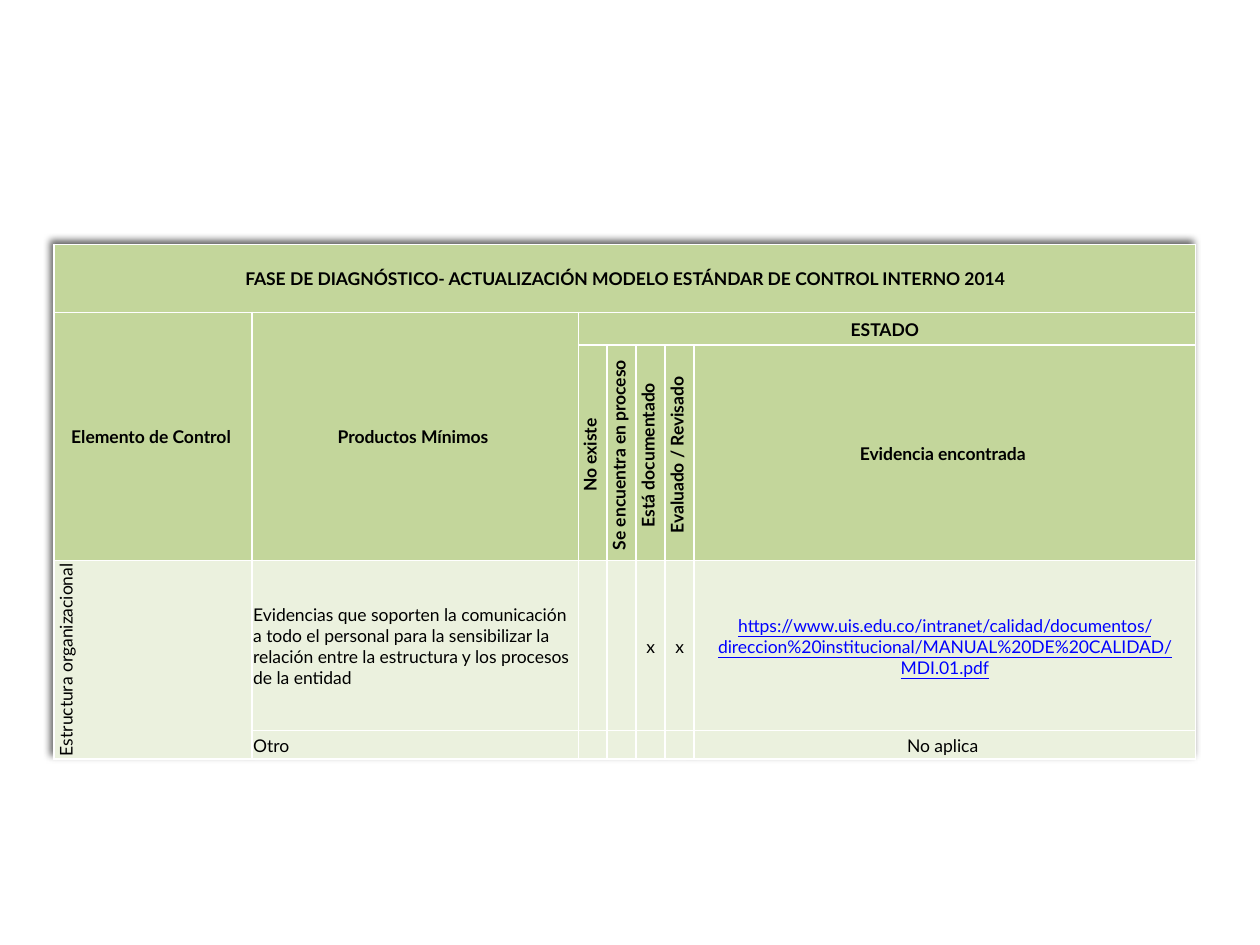
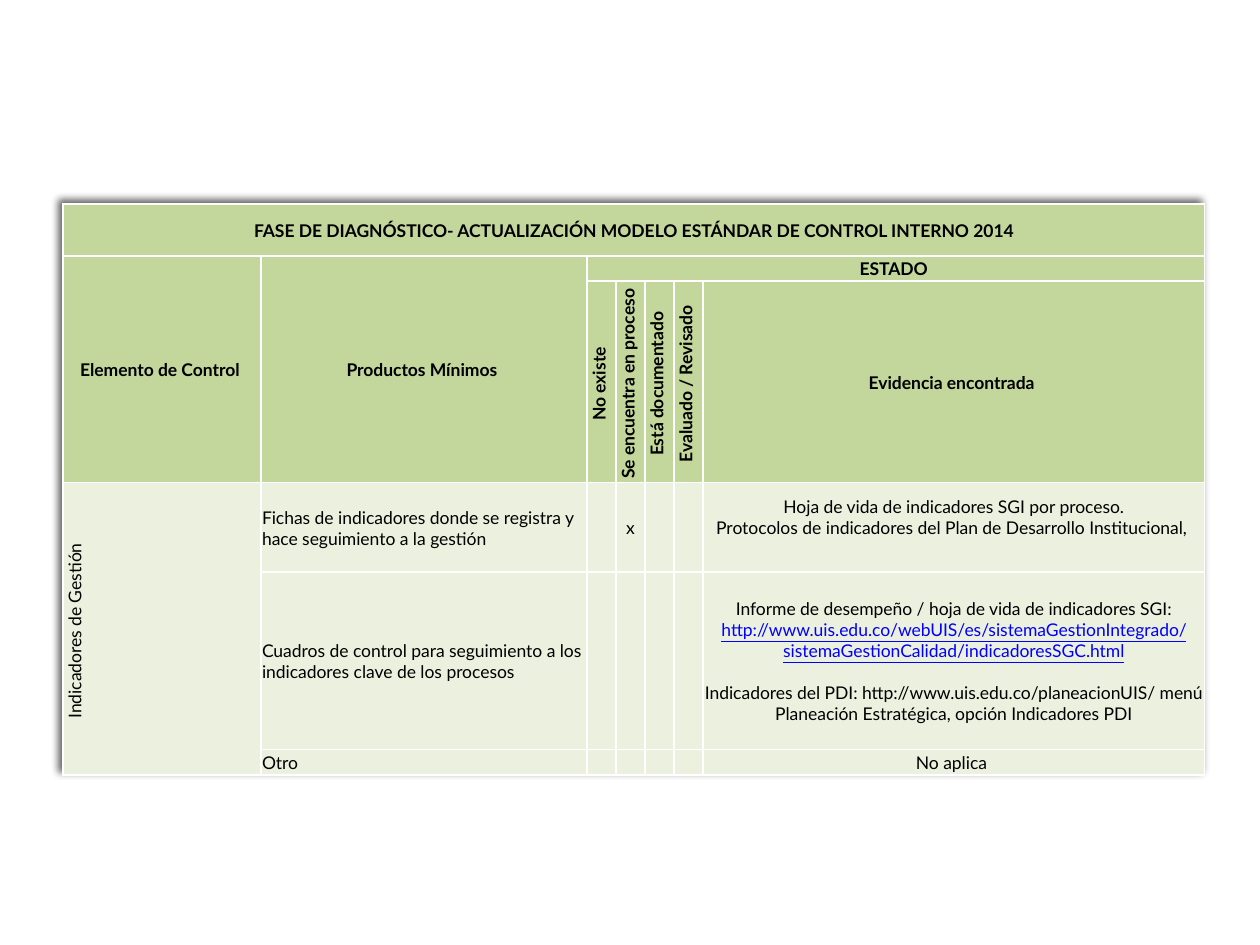
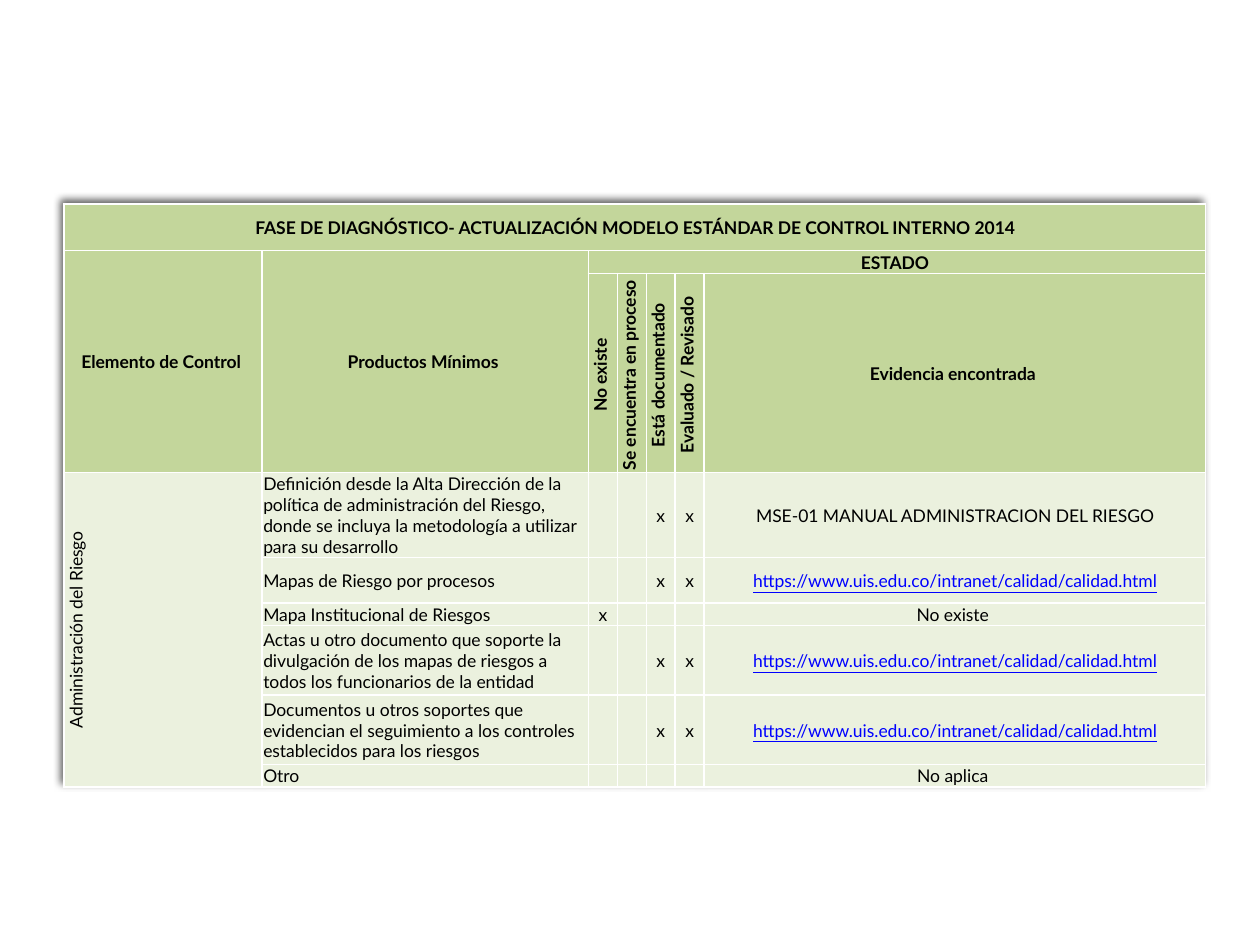
"""Builds the three diagnostic tables of the internal control model."""
from lxml.etree import SubElement
from pptx import Presentation
from pptx.dml.color import RGBColor
from pptx.enum.text import MSO_ANCHOR, PP_ALIGN
from pptx.oxml import parse_xml
from pptx.oxml.ns import nsdecls, qn
from pptx.util import Inches, Pt

CENTER, LEFT, MIDDLE = PP_ALIGN.CENTER, PP_ALIGN.LEFT, MSO_ANCHOR.MIDDLE
COLORS = {"header": "C3D69B", "body": "EBF1DE", "border": "FFFFFF", "text": "000000", "link": "0000FF"}
FONT, FONT_SIZE, LINE_HEIGHT = "Lato", Pt(10), Pt(12)
MARGINS = {"margin_left": Inches(0.01), "margin_right": Inches(0.01),
           "margin_top": Inches(0.01), "margin_bottom": 0, "vertical_anchor": MIDDLE}
COLUMN_WIDTHS = [1.57, 2.59] + [0.23] * 4 + [3.98]
PRODUCT_COLUMN, EVIDENCE_COLUMN = 1, 6
STATE_COLUMNS = range(2, 6)

HEADER = [
    ["FASE DE DIAGNÓSTICO- ACTUALIZACIÓN MODELO ESTÁNDAR DE CONTROL INTERNO 2014"] + [""] * 6,
    ["Elemento de Control ", "Productos Mínimos ", "ESTADO "] + [""] * 4,
    ["", "", "No existe ", "Se encuentra en proceso ", "Está documentado ",
     "Evaluado / Revisado ", "Evidencia encontrada "],
]
HEADER_MERGES = [((0, 0), (0, 6)), ((1, 0), (2, 0)), ((1, 1), (2, 1)), ((1, 2), (1, 6))]
QUALITY_PAGE = "https://www.uis.edu.co/intranet/calidad/calidad.html"
OTHER = ("Otro", "", "No aplica ")

# Each product holds its name, the numbers of its marked states and its evidence.
DIAGNOSTICS = [
    {"element": "Estructura organizacional ", "position": (0.43, 1.94),
     "rows": [0.54, 0.26, 1.71, 1.35, 0.21],
     "products": [
         ("Evidencias que soporten la comunicación a todo el personal para la sensibilizar la "
          "relación entre la estructura y los procesos de la entidad", "34",
          "https://www.uis.edu.co/intranet/calidad/documentos/direccion%20institucional/"
          "MANUAL%20DE%20CALIDAD/MDI.01.pdf"),
         OTHER]},
    {"element": "Indicadores de Gestión ", "position": (0.5, 1.62),
     "rows": [0.41, 0.2, 1.6, 0.71, 1.41, 0.2],
     "products": [
         ("Fichas de indicadores donde se registra y hace seguimiento a la gestión", "2",
          "Hoja de vida de indicadores SGI por proceso.\n"
          "Protocolos de indicadores del Plan de Desarrollo Institucional, \n"),
         ("Cuadros de control para seguimiento a los indicadores clave de los procesos", "",
          "Informe de desempeño / hoja de vida de indicadores SGI:\n"
          "http://www.uis.edu.co/webUIS/es/sistemaGestionIntegrado/sistemaGestionCalidad/"
          "indicadoresSGC.html\n\n"
          "Indicadores del PDI: http://www.uis.edu.co/planeacionUIS/ menú\n"
          "Planeación Estratégica, opción Indicadores PDI"),
         OTHER]},
    {"element": "Administración del Riesgo", "position": (0.51, 1.62),
     "rows": [0.37, 0.18, 1.58, 0.65, 0.36, 0.18, 0.55, 0.55, 0.18],
     "products": [
         ("Definición desde la Alta Dirección de la política de administración del Riesgo, donde "
          "se incluya la metodología a utilizar para su desarrollo", "34",
          "MSE-01 MANUAL ADMINISTRACION DEL RIESGO"),
         ("Mapas de Riesgo por procesos", "34", QUALITY_PAGE),
         ("Mapa Institucional de Riesgos", "1", "No existe "),
         ("Actas u otro documento que soporte la divulgación de los mapas de riesgos a todos los "
          "funcionarios de la entidad", "34", QUALITY_PAGE),
         ("Documentos u otros soportes que evidencian el seguimiento a los controles establecidos "
          "para los riesgos", "34", QUALITY_PAGE),
         OTHER]},
]


def apply_format(target, values):
    for name, value in values.items():
        setattr(target, name, value)


def write_text(cell, text, alignment, bold):
    """Write one paragraph a line; an empty line becomes a gap."""
    gap, paragraph = 0, None
    for line in text.split("\n"):
        if not line:
            gap += LINE_HEIGHT
            continue
        frame = cell.text_frame
        paragraph = frame.add_paragraph() if paragraph else frame.paragraphs[0]
        paragraph.alignment = alignment
        if gap:
            paragraph.space_before = gap
        gap = 0
        run = paragraph.add_run()
        run.text = line
        is_link = line.startswith("http")
        apply_format(run.font, {"name": FONT, "size": FONT_SIZE, "bold": bold, "underline": is_link})
        run.font.color.rgb = RGBColor.from_string(COLORS["link" if is_link else "text"])
    if paragraph:
        cell.margin_bottom = gap
    else:
        SubElement(cell.text_frame.paragraphs[0]._p, qn("a:endParaRPr"), sz=str(int(FONT_SIZE.pt * 100)))


def style_cell(cell, color, rotated):
    apply_format(cell, MARGINS)
    cell.fill.solid()
    cell.fill.fore_color.rgb = RGBColor.from_string(color)
    properties = cell._tc.get_or_add_tcPr()
    if rotated:
        properties.set("vert", "vert270")
    for index, side in enumerate("LRTB"):
        properties.insert(index, parse_xml(
            f'<a:ln{side} {nsdecls("a")} w="{Pt(1)}"><a:solidFill>'
            f'<a:srgbClr val="{COLORS["border"]}"/></a:solidFill></a:ln{side}>'))


def add_shadow(table):
    table._tbl.tblPr.insert(0, parse_xml(
        f'<a:effectLst {nsdecls("a")}><a:outerShdw blurRad="50800" dist="38100" dir="13500000" '
        'algn="br" rotWithShape="0"><a:srgbClr val="000000"><a:alpha val="60000"/></a:srgbClr>'
        '</a:outerShdw></a:effectLst>'))


def add_diagnostic(presentation, diagnostic):
    slide = presentation.slides.add_slide(presentation.slide_layouts[6])
    heights, products = diagnostic["rows"], diagnostic["products"]
    body = [["", name] + ["x" if str(state) in marks else "" for state in range(1, 5)] + [evidence]
            for name, marks, evidence in products]
    body[0][0] = diagnostic["element"]
    rows = HEADER + body
    box = (*diagnostic["position"], sum(COLUMN_WIDTHS), sum(heights))
    table = slide.shapes.add_table(len(rows), len(COLUMN_WIDTHS), *map(Inches, box)).table
    add_shadow(table)
    for column, width in zip(table.columns, COLUMN_WIDTHS):
        column.width = Inches(width)
    first_body, last = len(HEADER), len(rows) - 1
    for row_index, (texts, height) in enumerate(zip(rows, heights)):
        table.rows[row_index].height = Inches(height)
        is_header = row_index < first_body
        for column_index, text in enumerate(texts):
            cell = table.cell(row_index, column_index)
            rotated = (row_index == first_body - 1 and column_index in STATE_COLUMNS
                       or not is_header and column_index == 0)
            style_cell(cell, COLORS["header" if is_header else "body"], rotated)
            alignment = LEFT if column_index == PRODUCT_COLUMN and not is_header else CENTER
            write_text(cell, text, alignment, is_header)
    for start, end in HEADER_MERGES + [((first_body, 0), (last, 0))]:
        table.cell(*start).merge(table.cell(*end))


def main():
    presentation = Presentation()
    presentation.slide_width, presentation.slide_height = Inches(10), Inches(7.5)
    for diagnostic in DIAGNOSTICS:
        add_diagnostic(presentation, diagnostic)
    presentation.save("out.pptx")


if __name__ == "__main__":
    main()
